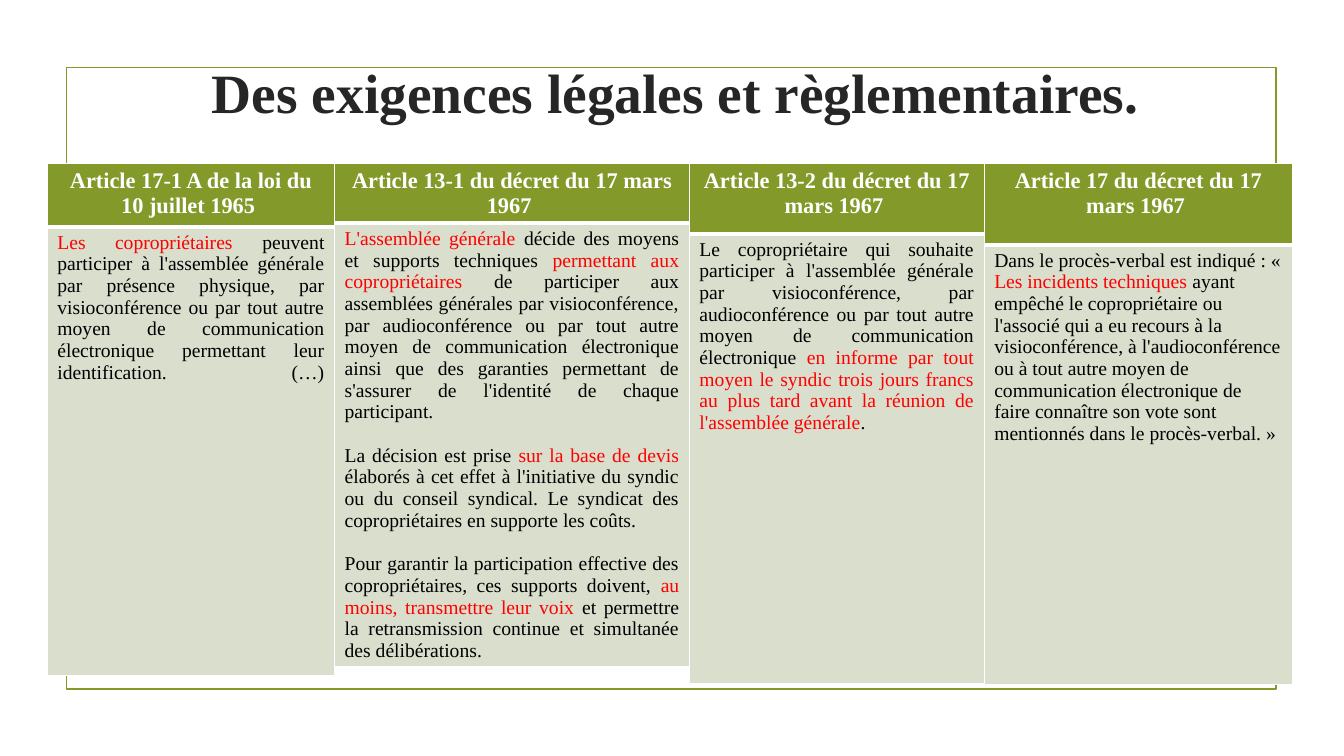
"""Build the slide comparing the legal texts on remote general meetings."""
import lxml.etree
import pptx
import pptx.dml.color
import pptx.enum.shapes
import pptx.enum.text
import pptx.oxml.ns
import pptx.util

Pt = pptx.util.Pt
ALIGN = pptx.enum.text.PP_ALIGN
COLOURS = {
    "olive": "83992A",
    "sage": "D9DECD",
    "title": "262626",
    "body": "000000",
    "accent": "FF0000",
    "white": "FFFFFF",
}
ARTICLES = [
    {
        "width": 205.2, "heights": (45.4, 320.4), "align": ALIGN.JUSTIFY,
        "heading": "Article 17-1 A de la loi du 10 juillet 1965 ",
        "paragraphs": [
            "|Les copropriétaires |peuvent participer à l'assemblée générale par présence "
            "physique, par visioconférence ou par tout autre moyen de communication "
            "électronique permettant leur identification. (…)\v",
        ],
    },
    {
        "width": 253.4, "heights": (42, 317), "align": ALIGN.JUSTIFY,
        "heading": "Article 13-1 du décret du 17 mars 1967 ",
        "paragraphs": [
            "|L'assemblée générale |décide des moyens et supports techniques |permettant aux "
            "copropriétaires |de participer aux assemblées générales par visioconférence, par "
            "audioconférence ou par tout autre moyen de communication électronique ainsi que "
            "des garanties permettant de s'assurer de l'identité de chaque participant. ",
            "La décision est prise |sur la base de devis| élaborés à cet effet à l'initiative "
            "du syndic ou du conseil syndical. Le syndicat des copropriétaires en supporte "
            "les coûts.",
            "Pour garantir la participation effective des copropriétaires, ces supports "
            "doivent, |au moins, transmettre leur voix| et permettre la retransmission "
            "continue et simultanée des délibérations.",
        ],
    },
    {
        "width": 210.6, "heights": (50.4, 321.4), "align": ALIGN.JUSTIFY,
        "heading": "Article 13-2 du décret du 17 mars 1967 ",
        "paragraphs": [
            "Le copropriétaire qui souhaite participer à l'assemblée générale par "
            "visioconférence, par audioconférence ou par tout autre moyen de communication "
            "électronique |en informe par tout moyen le syndic trois jours francs au plus "
            "tard avant la réunion de l'assemblée générale|.",
        ],
    },
    {
        "width": 220.3, "heights": (58.3, 313.9), "align": ALIGN.LEFT,
        "heading": "Article 17 du décret du 17 mars 1967 ",
        "paragraphs": [
            "Dans le procès-verbal est indiqué : « |Les incidents techniques |ayant empêché "
            "le copropriétaire ou l'associé qui a eu recours à la visioconférence, à "
            "l'audioconférence ou à tout autre moyen de communication électronique de faire "
            "connaître son vote sont mentionnés dans le procès-verbal. »",
        ],
    },
]


def rgb(name):
    """Return the named colour."""
    return pptx.dml.color.RGBColor.from_string(COLOURS[name])


def write(paragraph, text, size=14, colour="body", bold=False, align=ALIGN.LEFT, before=0):
    """Fill a paragraph, setting every second part between bars in the accent colour."""
    paragraph.alignment = align
    paragraph.space_before = Pt(before)
    for position, part in enumerate(text.split("|")):
        if not part:
            continue
        run = paragraph.add_run()
        run.text = part.rstrip("\v")
        run.font.name = "Times New Roman"
        run.font.size = Pt(size)
        run.font.bold = bold
        run.font.color.rgb = rgb("accent" if position % 2 else colour)
        if part.endswith("\v"):
            paragraph.add_line_break()


class SlideBuilder:
    """Hold the current slide and add its elements."""

    def __init__(self, slide):
        """Keep the slide to build on."""
        self.slide = slide

    def frame(self, left, top, width, height):
        """Add the outlined frame."""
        shape = self.slide.shapes.add_shape(
            pptx.enum.shapes.MSO_SHAPE.RECTANGLE, Pt(left), Pt(top), Pt(width), Pt(height))
        shape.shadow.inherit = False
        shape.fill.background()
        shape.line.color.rgb = rgb("olive")
        shape.line.width = Pt(1.25)

    def title(self, text, left, top, width, height):
        """Place and fill the title placeholder."""
        shape = self.slide.shapes.title
        shape.left, shape.top, shape.width, shape.height = map(Pt, (left, top, width, height))
        text_frame = shape.text_frame
        text_frame.auto_size = pptx.enum.text.MSO_AUTO_SIZE.NONE
        text_frame.vertical_anchor = pptx.enum.text.MSO_ANCHOR.MIDDLE
        write(text_frame.paragraphs[0], text, 39.6, "title", True, ALIGN.CENTER)

    def cell(self, cell, fill, borders):
        """Fill a cell and draw its white borders."""
        properties = cell._tc.get_or_add_tcPr()
        for side, width in borders.items():
            line = lxml.etree.SubElement(
                properties, pptx.oxml.ns.qn("a:ln" + side), w=str(Pt(width)))
            solid = lxml.etree.SubElement(line, pptx.oxml.ns.qn("a:solidFill"))
            lxml.etree.SubElement(solid, pptx.oxml.ns.qn("a:srgbClr"), val=COLOURS["white"])
        cell.fill.solid()
        cell.fill.fore_color.rgb = rgb(fill)

    def article(self, article, left, top):
        """Add the two-row table of one article."""
        heights = article["heights"]
        table = self.slide.shapes.add_table(
            2, 1, Pt(left), Pt(top), Pt(article["width"]), Pt(sum(heights))).table
        table.first_row = table.horz_banding = False
        for row, height in zip(table.rows, heights):
            row.height = Pt(height)
        heading, body = table.cell(0, 0), table.cell(1, 0)
        self.cell(heading, "olive", {"L": 1, "R": 1, "T": 1, "B": 3})
        self.cell(body, "sage", {"L": 1, "R": 1, "T": 3, "B": 1})
        write(heading.text_frame.paragraphs[0], article["heading"], 16, "white", True, ALIGN.CENTER)
        for position, text in enumerate(article["paragraphs"]):
            text_frame = body.text_frame
            paragraph = text_frame.add_paragraph() if position else text_frame.paragraphs[0]
            write(paragraph, text, align=article["align"], before=15.5 if position else 0)


def main():
    """Build and save the presentation."""
    presentation = pptx.Presentation()
    presentation.slide_width, presentation.slide_height = Pt(960), Pt(540)
    builder = SlideBuilder(presentation.slides.add_slide(presentation.slide_layouts[5]))
    builder.frame(47.5, 48.2, 864, 444.2)
    builder.title("Des exigences légales et règlementaires. ", 109.4, 13.7, 756, 103)
    left = 33.8
    for article in ARTICLES:
        builder.article(article, left, 116.6)
        left += article["width"]
    presentation.save("out.pptx")


if __name__ == "__main__":
    main()
